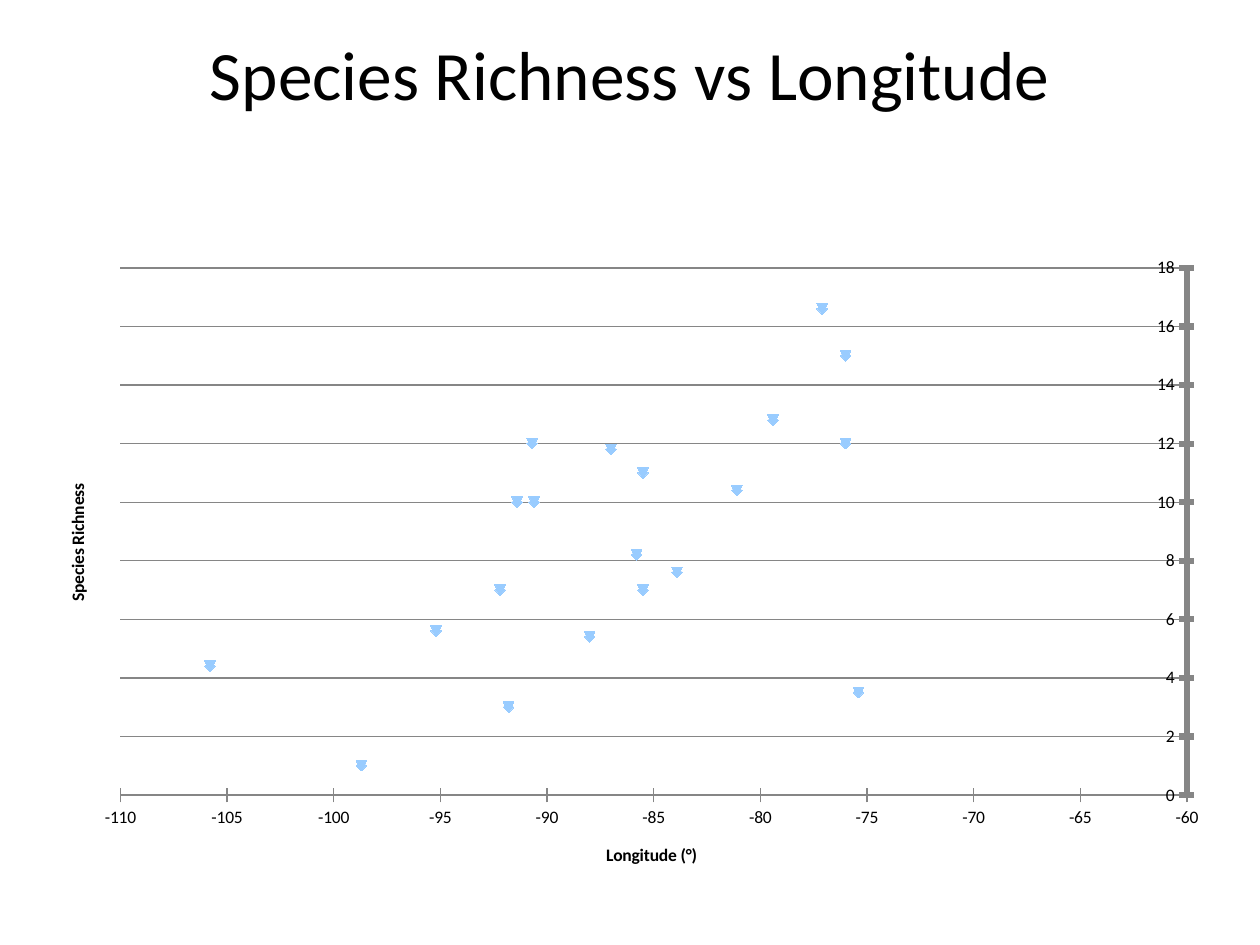
from lxml import etree
from pptx import Presentation
from pptx.chart.data import XyChartData
from pptx.dml.color import RGBColor
from pptx.enum.chart import XL_CHART_TYPE, XL_MARKER_STYLE, XL_TICK_MARK
from pptx.enum.text import MSO_ANCHOR, PP_ALIGN
from pptx.oxml.ns import qn
from pptx.util import Inches, Pt

SCATTER = XL_CHART_TYPE.XY_SCATTER
DIAMOND = XL_MARKER_STYLE.DIAMOND
CROSS = XL_TICK_MARK.CROSS
TOP = MSO_ANCHOR.TOP
CENTER = PP_ALIGN.CENTER

COLORS = {"text": "000000", "axis": "868686", "marker": "99CCFF"}
FONT = "Calibri"

# Longitude in degrees, species richness
SITES = [
    (-85.8, 8.2), (-85.5, 7), (-77.1, 16.6), (-76, 12), (-76, 15),
    (-75.4, 3.5), (-79.4, 12.8), (-81.1, 10.4), (-85.5, 11), (-95.2, 5.6),
    (-98.7, 1), (-105.8, 4.4), (-83.9, 7.6), (-87, 11.8), (-88, 5.4),
    (-91.8, 3), (-90.7, 12), (-90.6, 10), (-92.2, 7), (-91.4, 10),
]


def write_text(text_frame, text, size, bold=False):
    paragraph = text_frame.paragraphs[0]
    paragraph.alignment = CENTER
    run = paragraph.add_run()
    run.text = text
    run.font.name = FONT
    run.font.size = Pt(size)
    run.font.bold = bold
    run.font.color.rgb = RGBColor.from_string(COLORS["text"])


def style_line(line, color, width):
    line.color.rgb = RGBColor.from_string(COLORS[color])
    line.width = Pt(width)


presentation = Presentation()
presentation.slide_width = Inches(10)
presentation.slide_height = Inches(7.5)
width, height = presentation.slide_width, presentation.slide_height
slide = presentation.slides.add_slide(presentation.slide_layouts[6])
margin = int(width * 0.05)

# Title
title = slide.shapes.add_textbox(margin, Inches(0.25), width - 2 * margin, Inches(1.3))
title.text_frame.word_wrap = True
title.text_frame.vertical_anchor = TOP
title.text_frame.margin_top = 0
write_text(title.text_frame, "Species Richness vs Longitude", size=39.6)

# Scatter chart
chart_data = XyChartData()
for name in ("Series 1", "Series 2"):
    series_data = chart_data.add_series(name)
    for longitude, richness in SITES:
        series_data.add_data_point(longitude, richness)
chart = slide.shapes.add_chart(
    SCATTER, margin, Inches(1.78), width - margin, Inches(5.42), chart_data
).chart
chart.has_title = False
chart.has_legend = False
chart.font.name = FONT
chart.font.size = Pt(10)
chart.font.color.rgb = RGBColor.from_string(COLORS["text"])

# Axes
longitude_axis, richness_axis = chart.category_axis, chart.value_axis
for axis, label, low, high, step, line_width in (
    (longitude_axis, "Longitude (°)", -110, -60, 5, 0.75),
    (richness_axis, "Species Richness", 0, 18, 2, 3.5),
):
    axis.minimum_scale, axis.maximum_scale, axis.major_unit = low, high, step
    axis.major_tick_mark = CROSS
    axis.tick_labels.number_format = "General"
    axis.tick_labels.number_format_is_linked = False
    style_line(axis.format.line, "axis", line_width)
    write_text(axis.axis_title.text_frame, label, size=10, bold=True)
longitude_axis.has_major_gridlines = False
richness_axis.has_major_gridlines = True
style_line(richness_axis.major_gridlines.format.line, "axis", 0.75)

# Markers: a diamond, with the automatic symbol of the third index over it
diamond_series, automatic_series = chart.plots[0].series
for series in (diamond_series, automatic_series):
    series.format.line.fill.background()
    series.marker.size = 6
    series.marker.format.fill.solid()
    series.marker.format.fill.fore_color.rgb = RGBColor.from_string(COLORS["marker"])
    style_line(series.marker.format.line, "marker", 0.75)
diamond_series.marker.style = DIAMOND
automatic_series.marker.style = None
automatic_series._element.find(qn("c:idx")).set("val", "2")

# Inner plot area as shares of the chart
plot_area = chart._chartSpace.chart.plotArea
for old_layout in plot_area.findall(qn("c:layout")):
    plot_area.remove(old_layout)
layout = etree.Element(qn("c:layout"))
manual_layout = etree.SubElement(layout, qn("c:manualLayout"))
for tag, value in (
    ("layoutTarget", "inner"), ("xMode", "edge"), ("yMode", "edge"),
    ("x", "0.048"), ("y", "0.064"), ("w", "0.891"), ("h", "0.772"),
):
    etree.SubElement(manual_layout, qn(f"c:{tag}")).set("val", value)
plot_area.insert(0, layout)

presentation.save("out.pptx")
